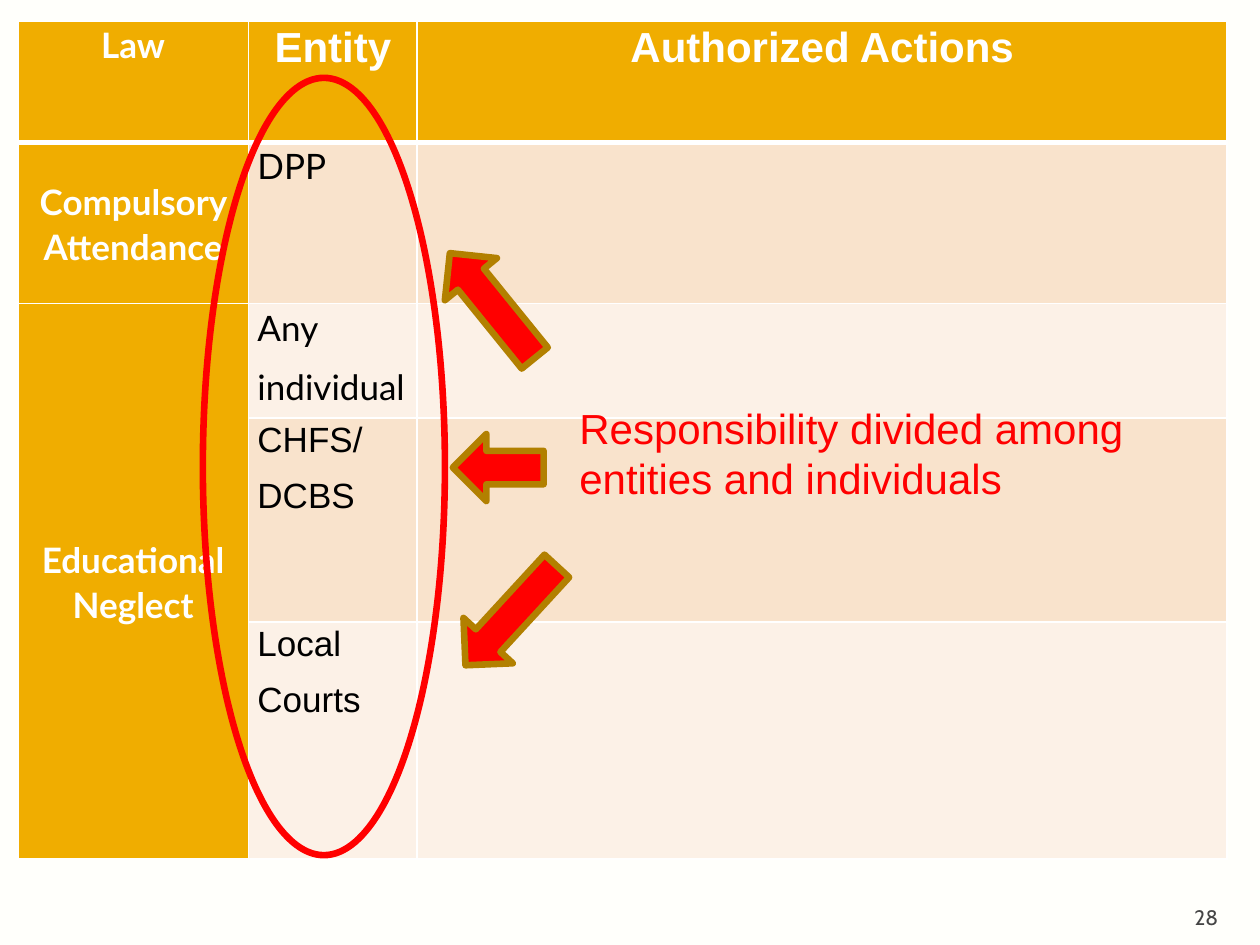
from dataclasses import dataclass
from typing import Any

from lxml.etree import SubElement
from pptx import Presentation
from pptx.dml.color import RGBColor as Rgb
from pptx.enum.shapes import MSO_SHAPE as Shape
from pptx.enum.text import MSO_ANCHOR as Anchor, MSO_AUTO_SIZE as AutoSize, PP_ALIGN as Align
from pptx.oxml.ns import qn
from pptx.util import Cm, Pt

COLORS = {
    "page": "FFFFFB", "white": "FFFFFF", "black": "000000", "gold": "F0AD00",
    "peach": "F9E3CC", "cream": "FCF1E7", "red": "FF0000", "bronze": "B28000",
    "gray": "454545",
}


@dataclass
class PageBuilder:
    """Draws styled elements on the current slide."""

    page: Any
    outline: float = 3.78

    def background(self, color):
        fill = self.page.background.fill
        fill.solid()
        fill.fore_color.rgb = Rgb.from_string(COLORS[color])

    def style(self, para, font, size, color, bold=False, align=Align.LEFT):
        para.alignment = align
        para.font.name = font
        para.font.size = Pt(size)
        para.font.bold = bold
        para.font.color.rgb = Rgb.from_string(COLORS[color])

    def text(self, words, place, font, size, color, align=Align.LEFT, anchor=Anchor.TOP, grow=False):
        frame = self.page.shapes.add_textbox(*map(Cm, place)).text_frame
        frame.word_wrap = True
        frame.vertical_anchor = anchor
        frame.auto_size = AutoSize.SHAPE_TO_FIT_TEXT if grow else AutoSize.NONE
        if anchor == Anchor.BOTTOM:
            frame.margin_bottom = 0
        frame.text = words
        self.style(frame.paragraphs[0], font, size, color, align=align)

    def shape(self, kind, place, line, fill=None, rotation=0):
        shape = self.page.shapes.add_shape(kind, *map(Cm, place))
        shape.shadow.inherit = False
        shape.rotation = rotation
        shape.line.width = Pt(self.outline)
        shape.line.color.rgb = Rgb.from_string(COLORS[line])
        if fill:
            shape.fill.solid()
            shape.fill.fore_color.rgb = Rgb.from_string(COLORS[fill])
        else:
            shape.fill.background()

    def table(self, place, widths, heights):
        size = sum(widths), sum(heights)
        table = self.page.shapes.add_table(
            len(heights), len(widths), *map(Cm, (*place, *size))).table
        for column, width in zip(table.columns, widths):
            column.width = Cm(width)
        for row, height in zip(table.rows, heights):
            row.height = Cm(height)
        return table

    def borders(self, cell, widths):
        props = cell._tc.get_or_add_tcPr()
        for index, (side, width) in enumerate(widths.items()):
            line = props.makeelement(qn(f"a:{side}"), {"w": str(Pt(width))})
            fill = SubElement(line, qn("a:solidFill"))
            SubElement(fill, qn("a:srgbClr"), val=COLORS["white"])
            props.insert(index, line)

    def cell(self, cell, lines, fill, font, size, heading, middle, widths):
        cell.fill.solid()
        cell.fill.fore_color.rgb = Rgb.from_string(COLORS[fill])
        cell.margin_left = cell.margin_right = Cm(0.18)
        cell.margin_top = cell.margin_bottom = 0
        cell.vertical_anchor = Anchor.MIDDLE if middle else Anchor.TOP
        cell.text = "\n".join(lines)
        for para in cell.text_frame.paragraphs:
            color, align = ("white", Align.CENTER) if heading else ("black", Align.LEFT)
            self.style(para, font, size, color, heading, align)
            para.line_spacing = 1.07
            para.space_after = Pt(8)
        self.borders(cell, widths)


def add_law_table(builder):
    rows = [
        (["Law"], ["Entity"], ["Authorized Actions"]),
        (["Compulsory Attendance"], ["DPP"], []),
        (["Educational Neglect"], ["Any", "individual"], []),
        ([], ["CHFS/", "DCBS"], []),
        ([], ["Local", "Courts"], []),
    ]
    table = builder.table((0.36, 0.43), (4.65, 3.4, 16.33), (2.44, 3.25, 2.31, 4.11, 4.78))
    for r, row in enumerate(rows):
        for c, lines in enumerate(row):
            heading = r == 0 or c == 0
            fill = "gold" if heading else ("peach" if r % 2 else "cream")
            font = "Lato" if c == 0 or r in (1, 2) else "Arial"
            size = 24 if r == 0 and c else 20
            widths = {"lnL": 1, "lnR": 1, "lnT": 3 if r == 1 else 1, "lnB": 3 if r == 0 else 1}
            builder.cell(table.cell(r, c), lines, fill, font, size, heading, r and c == 0, widths)
    table.cell(2, 0).merge(table.cell(4, 0))


def main():
    deck = Presentation()
    deck.slide_width, deck.slide_height = Cm(25.4), Cm(19.05)
    builder = PageBuilder(deck.slides.add_slide(deck.slide_layouts[6]))
    builder.background("page")
    add_law_table(builder)
    builder.text("28", (22.78, 17.98, 2.03, 0.76), "Cabin", 12, "gray", Align.RIGHT, Anchor.BOTTOM)
    builder.shape(Shape.OVAL, (4.09, 1.57, 4.88, 15.67), "red")
    builder.text("Responsibility divided among entities and individuals",
                 (11.43, 7.98, 12.7, 2.31), "Arial", 24, "red", grow=True)
    arrows = [(9.25, 4.8, 2.72, 321), (9.63, 11.05, 2.72, 222.6), (9.37, 8.51, 1.83, 270)]
    for left, top, length, rotation in arrows:
        builder.shape(Shape.UP_ARROW, (left, top, 1.35, length), "bronze", "red", rotation)
    deck.save("out.pptx")


if __name__ == "__main__":
    main()
